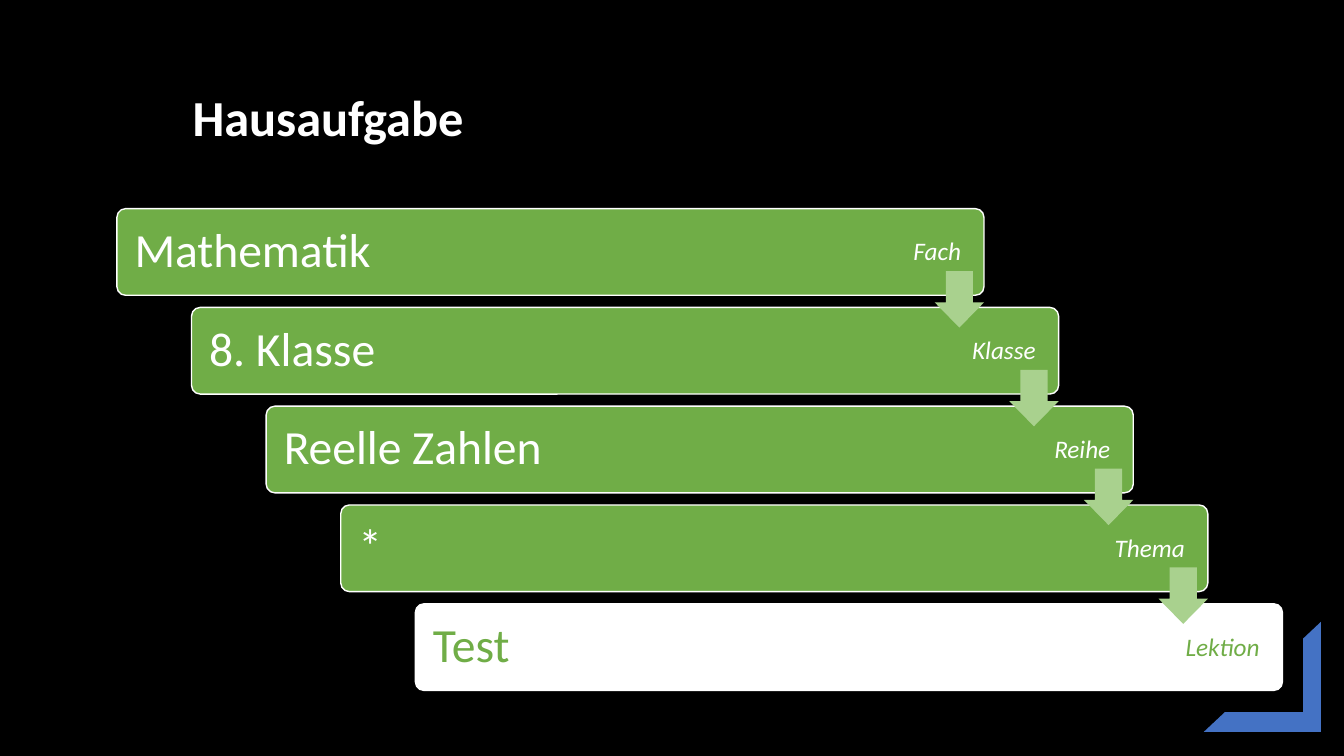
import pptx
import pptx.dml.color
import pptx.enum.shapes
import pptx.enum.text
import pptx.util

Inches = pptx.util.Inches
Pt = pptx.util.Pt
Shapes = pptx.enum.shapes.MSO_SHAPE
Anchor = pptx.enum.text.MSO_ANCHOR
Align = pptx.enum.text.PP_ALIGN
RGBColor = pptx.dml.color.RGBColor

BLACK = RGBColor(0x00, 0x00, 0x00)
WHITE = RGBColor(0xFF, 0xFF, 0xFF)
GREEN = RGBColor(0x70, 0xAD, 0x47)
LIGHT_GREEN = RGBColor(0xA9, 0xD1, 0x8E)
BLUE = RGBColor(0x44, 0x72, 0xC4)

FONT = "Calibri"
STEP_X, STEP_Y = 0.74, 0.98
STEPS = [
    ("Mathematik", "Fach"),
    ("8. Klasse", "Klasse"),
    ("Reelle Zahlen", "Reihe"),
    ("*", "Thema"),
    ("Test", "Lektion"),
]


def stair_box(step, left, top, width, height):
    return (Inches(left + step * STEP_X), Inches(top + step * STEP_Y),
            Inches(width), Inches(height))


def write(shape, text, size, color, align, bold=False, italic=False):
    paragraph = shape.text_frame.paragraphs[0]
    paragraph.text = text
    paragraph.alignment = align
    font = paragraph.font
    font.name, font.size, font.bold, font.italic = FONT, Pt(size), bold, italic
    font.color.rgb = color
    return paragraph


def add_shape(slide, kind, box, fill, adjustments):
    shape = slide.shapes.add_shape(kind, *box)
    shape.shadow.inherit = False
    for index, value in enumerate(adjustments):
        shape.adjustments[index] = value
    shape.fill.solid()
    shape.fill.fore_color.rgb = fill
    shape.line.fill.background()
    return shape


def add_title(slide, text):
    title = slide.shapes.title
    title.left, title.top = Inches(1.81), Inches(0.8)
    title.width, title.height = Inches(7.78), Inches(0.71)
    title.text_frame.vertical_anchor = Anchor.TOP
    write(title, text, 36, WHITE, Align.LEFT, bold=True)


def add_bar(slide, step, text, fill, color):
    box = stair_box(step, 1.16, 2.07, 8.6, 0.86)
    bar = add_shape(slide, Shapes.ROUNDED_RECTANGLE, box, fill, [0.1])
    bar.line.color.rgb = WHITE
    bar.line.width = Pt(1)
    frame = bar.text_frame
    frame.word_wrap = True
    frame.vertical_anchor = Anchor.MIDDLE
    frame.margin_left = frame.margin_top = frame.margin_bottom = Inches(0.15)
    frame.margin_right = Inches(1.44)
    write(bar, text, 34, color, Align.LEFT).line_spacing = 0.9


def add_arrow(slide, step):
    box = stair_box(step, 9.27, 2.69, 0.49, 0.56)
    add_shape(slide, Shapes.DOWN_ARROW, box, LIGHT_GREEN, [0.55, 0.51])


def add_label(slide, step, text, color):
    label = slide.shapes.add_textbox(*stair_box(step, 7.84, 2.29, 1.79, 0.4))
    label.text_frame.word_wrap = True
    write(label, text, 18, color, Align.RIGHT, italic=True)


def main():
    presentation = pptx.Presentation()
    presentation.slide_width = Inches(13.33)
    presentation.slide_height = Inches(7.5)
    slide = presentation.slides.add_slide(presentation.slide_layouts[5])
    slide.background.fill.solid()
    slide.background.fill.fore_color.rgb = BLACK

    add_title(slide, "Hausaufgabe")
    corner_box = [Inches(value) for value in (11.94, 6.17, 1.16, 1.09)]
    corner = add_shape(slide, Shapes.HALF_FRAME, corner_box, BLUE, [0.18, 0.16])
    corner.rotation = 180

    last = len(STEPS) - 1
    for step, (topic, level) in enumerate(STEPS):
        fill, color = (WHITE, GREEN) if step == last else (GREEN, WHITE)
        add_bar(slide, step, topic, fill, color)
        add_label(slide, step, level, color)
    for step in range(last):
        add_arrow(slide, step)

    presentation.save("out.pptx")


if __name__ == "__main__":
    main()
